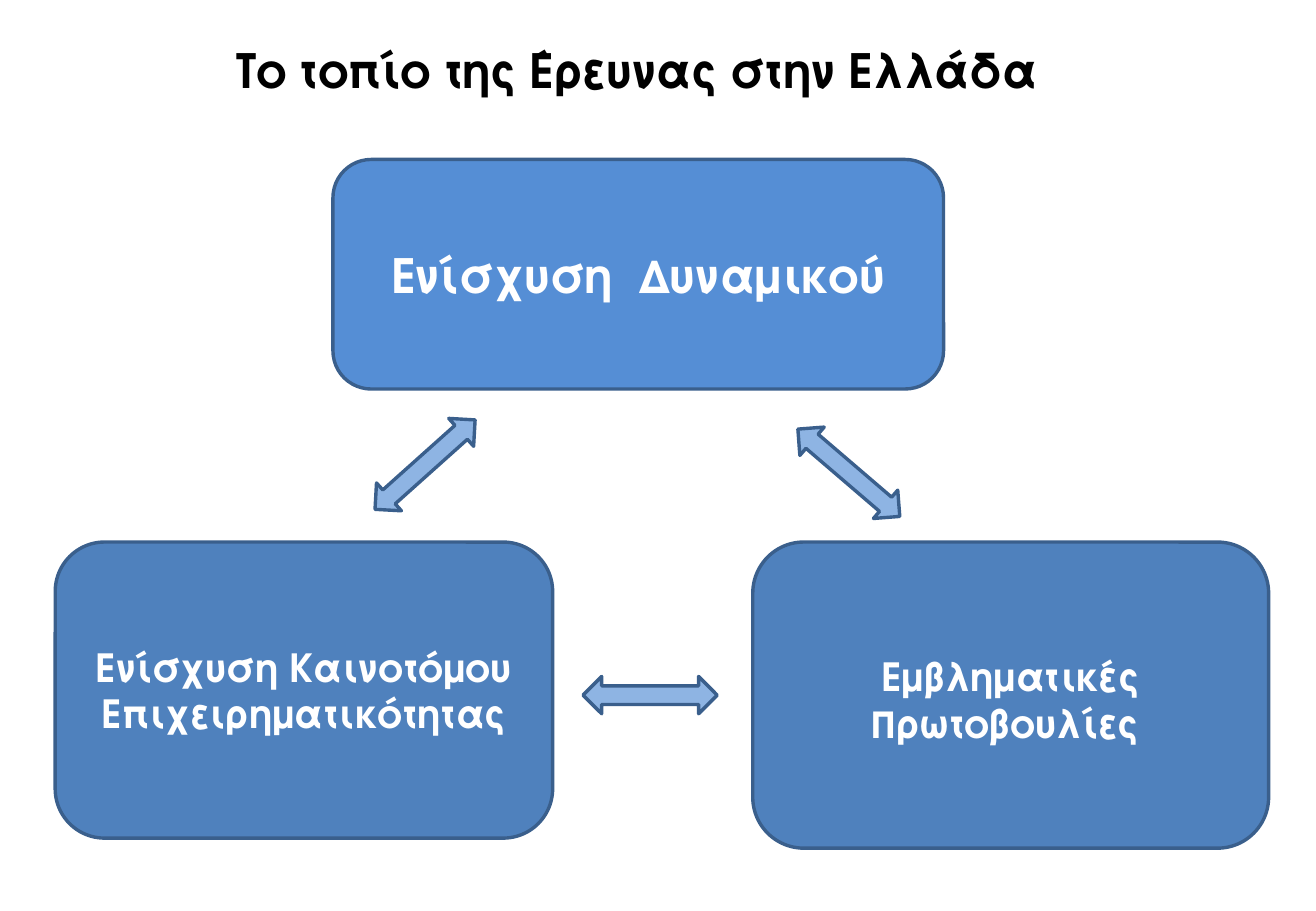
from pptx import Presentation
from pptx.dml.color import RGBColor
from pptx.enum.shapes import MSO_SHAPE as SHAPE
from pptx.enum.text import MSO_ANCHOR as ANCHOR, PP_ALIGN as ALIGN
from pptx.util import Inches, Pt

WIDTH, HEIGHT = Inches(10.83), Inches(7.5)
COL, ROW = WIDTH / 100, HEIGHT / 100
FONT = "TeX Gyre Adventor"
BLACK = RGBColor(0x00, 0x00, 0x00)
WHITE = RGBColor(0xFF, 0xFF, 0xFF)
BRIGHT_BLUE = RGBColor(0x55, 0x8E, 0xD5)
MID_BLUE = RGBColor(0x4F, 0x81, 0xBD)
PALE_BLUE = RGBColor(0x8E, 0xB4, 0xE3)
OUTLINE = RGBColor(0x3A, 0x5F, 0x8C)
ARROW_COLS, ARROW_ROWS = 10.2, 4.1


def grid(col, row, cols, rows):
    return round(col * COL), round(row * ROW), round(cols * COL), round(rows * ROW)


def write(sp, text, size, color):
    tf = sp.text_frame
    tf.word_wrap = True
    p = tf.paragraphs[0]
    p.text = text
    p.alignment = ALIGN.CENTER
    font = p.runs[0].font
    font.name, font.size, font.bold = FONT, Pt(size), True
    font.color.rgb = color
    return tf


def add_outlined(s, kind, place, fill):
    sp = s.shapes.add_shape(kind, *grid(*place))
    sp.shadow.inherit = False
    sp.fill.solid()
    sp.fill.fore_color.rgb = fill
    sp.line.color.rgb = OUTLINE
    sp.line.width = Pt(2)
    return sp


def add_title(s, text, place):
    write(s.shapes.add_textbox(*grid(*place)), text, 28, BLACK)


def add_box(s, text, place, fill, size, top=0.05):
    sp = add_outlined(s, SHAPE.ROUNDED_RECTANGLE, place, fill)
    tf = write(sp, text, size, WHITE)
    tf.vertical_anchor = ANCHOR.MIDDLE
    tf.margin_top = Inches(top)


def add_arrow(s, center_col, center_row, angle):
    place = (center_col - ARROW_COLS / 2, center_row - ARROW_ROWS / 2,
             ARROW_COLS, ARROW_ROWS)
    sp = add_outlined(s, SHAPE.LEFT_RIGHT_ARROW, place, PALE_BLUE)
    sp.rotation = angle


def main():
    prs = Presentation()
    prs.slide_width, prs.slide_height = WIDTH, HEIGHT
    s = prs.slides.add_slide(prs.slide_layouts[6])

    add_box(s, "Ενίσχυση  Δυναμικού", (25.3, 17.5, 46.4, 25.2), BRIGHT_BLUE, 28)
    for arrow in ((32.3, 51, 138.2), (64.5, 51.9, 40.6), (49.4, 76.3, 180)):
        add_arrow(s, *arrow)
    add_title(s, "Το τοπίο της Έρευνας στην Ελλάδα ", (9.9, 3.9, 78, 7.6))
    add_box(s, "Εμβληματικές Πρωτοβουλίες ", (57.2, 59.5, 39.2, 33.6),
            MID_BLUE, 23, top=0.12)
    add_box(s, "Ενίσχυση Καινοτόμου Επιχειρηματικότητας",
            (4.2, 59.5, 37.8, 32.5), MID_BLUE, 23)

    prs.save("out.pptx")


if __name__ == "__main__":
    main()
